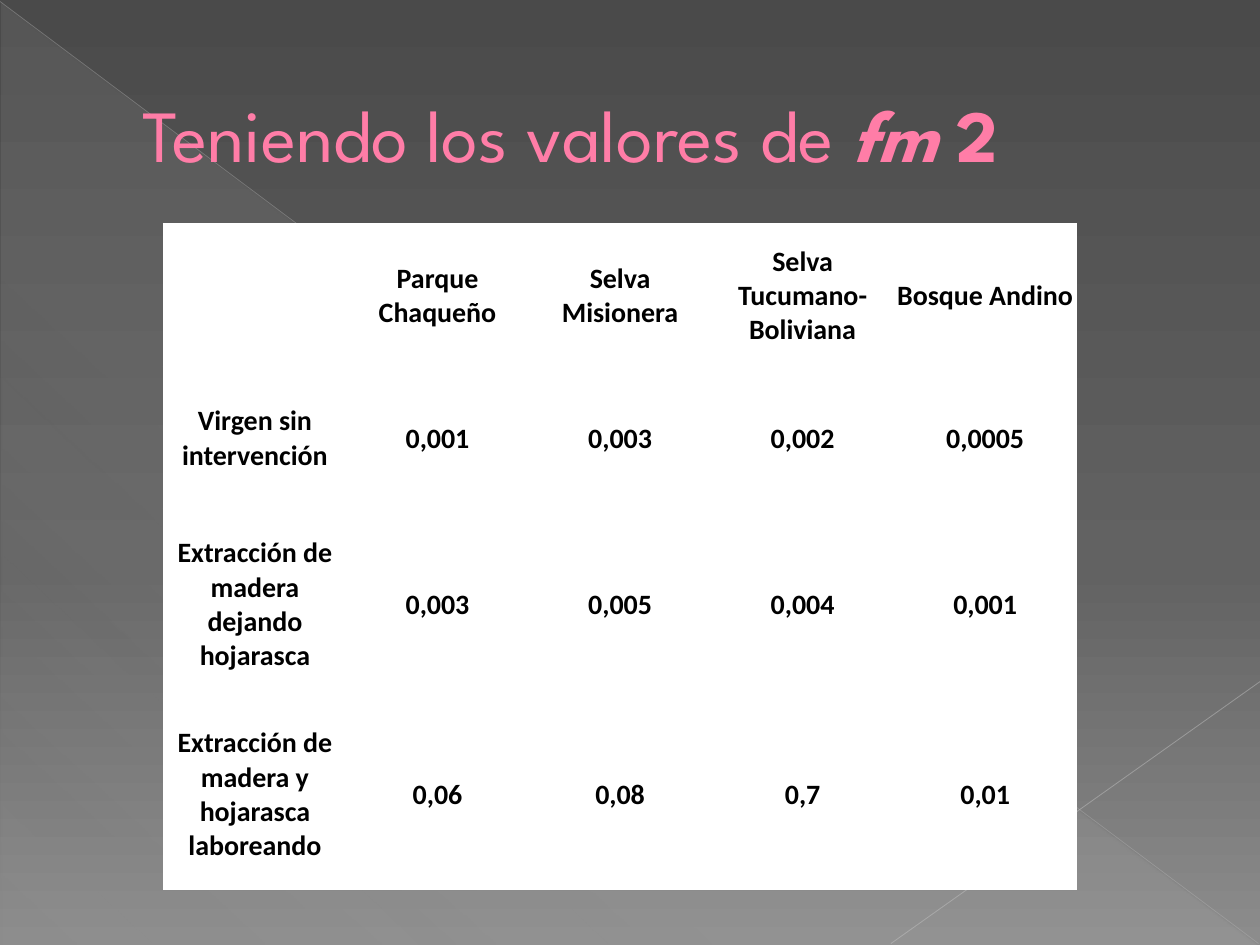
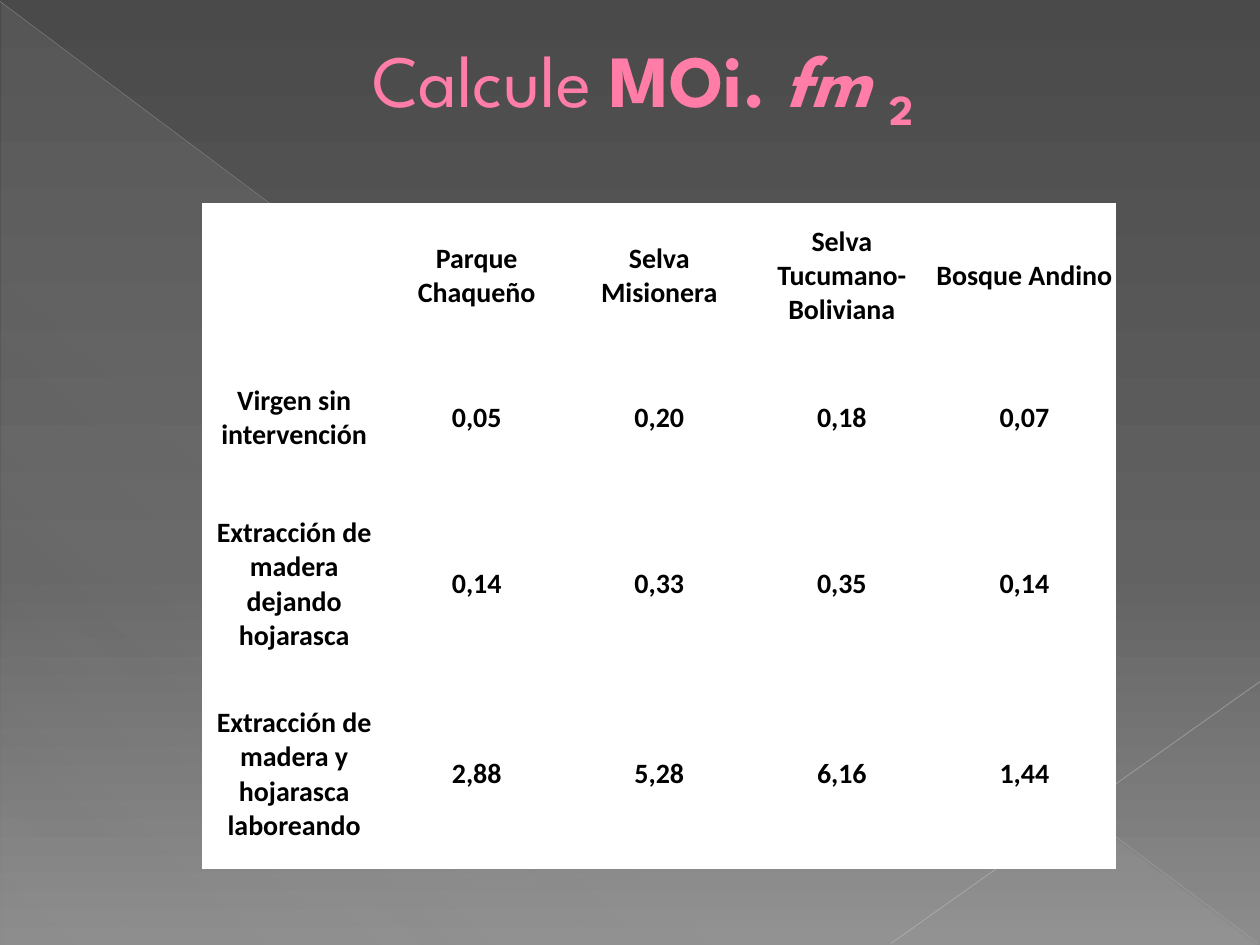
from lxml import etree
from pptx import Presentation
from pptx.dml.color import RGBColor
from pptx.enum import shapes, text
from pptx.oxml import ns
from pptx.util import Cm, Pt

PINK, PLUM, WHITE, BLACK = "FF7DA7", "B12761", "FFFFFF", "000000"
BACKDROP = [(0, "4A4A4A", 100), (60, "626262", 100), (100, "8C8C8C", 100)]
SHEEN = [(0, "D2D2D2", 10), (70, "D2D2D2", 8), (100, "D2D2D2", 1)]
RAYS = [
    ((0, 0.03, 25.37, 19.02), "BFBFBF", 0.39, 35),
    ((25.4, 13.74, 17.96, 19.02), "C6C6C6", 0.47, 45),
]
TITLE_FONT, TABLE_FONT = "League Spartan", "Calibri"
TITLE_BOX = (1.27, 0.74, 22.86, 3.89)

FORESTS = ["Parque Chaqueño", "Selva Misionera", "Selva Tucumano-Boliviana", "Bosque Andino"]
USES = [
    "Virgen sin intervención",
    "Extracción de madera dejando hojarasca",
    "Extracción de madera y hojarasca laboreando",
]
COLUMN_WIDTH = 3.68
ROW_HEIGHTS = [2.87, 2.87, 3.83, 3.83]

PAGES = [
    {
        "title": [
            ("Teniendo los valores de ", {}),
            ("fm ", {"bold": True, "italic": True}),
            ("2", {"bold": True}),
        ],
        "layout": {"align": text.PP_ALIGN.LEFT, "indent": 1.35, "bottom": 0.13},
        "corner": (3.3, 4.52),
        "values": [
            ["0,001", "0,003", "0,002", "0,0005"],
            ["0,003", "0,005", "0,004", "0,001"],
            ["0,06", "0,08", "0,7", "0,01"],
        ],
    },
    {
        "title": [
            ("Calcule ", {}),
            ("MOi. ", {"bold": True}),
            ("fm ", {"bold": True, "italic": True}),
            ("2", {"bold": True, "baseline": -25}),
        ],
        "layout": {"align": text.PP_ALIGN.CENTER, "indent": 0.53, "bottom": 2.1},
        "corner": (4.09, 4.11),
        "values": [
            ["0,05", "0,20", "0,18", "0,07"],
            ["0,14", "0,33", "0,35", "0,14"],
            ["2,88", "5,28", "6,16", "1,44"],
        ],
    },
]


def color(value):
    return RGBColor.from_string(value)


def add(parent, tag, **attributes):
    child = etree.SubElement(parent, ns.qn(tag))
    for name, value in attributes.items():
        child.set(name, str(value))
    return child


def add_color(parent, value, opacity=100):
    tone = add(parent, "a:srgbClr", val=value)
    if opacity < 100:
        add(tone, "a:alpha", val=opacity * 1000)


def set_gradient(fill, root, stops, angle):
    fill.gradient()
    gradient = root.find(".//" + ns.qn("a:gradFill"))
    for child in list(gradient):
        gradient.remove(child)
    stop_list = add(gradient, "a:gsLst")
    for position, value, opacity in stops:
        add_color(add(stop_list, "a:gs", pos=position * 1000), value, opacity)
    add(gradient, "a:lin", ang=angle * 60000, scaled=0)


def add_span(para, words, font, size, tint, bold=False, italic=False, baseline=0, outline=None):
    span = para.add_run()
    span.text = words
    span.font.name, span.font.size = font, Pt(size)
    span.font.bold, span.font.italic = bold, italic
    span.font.color.rgb = color(tint)
    properties = span.font._element
    if baseline:
        properties.set("baseline", str(baseline * 1000))
    if outline:
        line = add(properties, "a:ln", w=Pt(0.5))
        add_color(add(line, "a:solidFill"), outline)
        properties.insert(0, line)


def decorate_master(master, page):
    """Give the master its gradient, corner triangle and thin diagonal lines."""
    set_gradient(master.background.fill, master.element, BACKDROP, 90)
    triangle = page.shapes.add_shape(
        shapes.MSO_SHAPE.RIGHT_TRIANGLE, Cm(0.03), Cm(0.05), Cm(25.34), Cm(19))
    triangle.shadow.inherit = False
    triangle.line.fill.background()
    set_gradient(triangle.fill, triangle.element, SHEEN, 133)
    decor = [triangle]
    for ends, tint, width, opacity in RAYS:
        ray = page.shapes.add_connector(shapes.MSO_CONNECTOR.STRAIGHT, *map(Cm, ends))
        ray.line.width = Pt(width)
        ray.line.color.rgb = color(tint)
        tone = ray.element.spPr.find(".//" + ns.qn("a:srgbClr"))
        add(tone, "a:alpha", val=opacity * 1000)
        add(ray.element.spPr, "a:effectLst")
        decor.append(ray)
    for order, shape in enumerate(decor):
        shape.element.xpath(".//p:cNvPr")[0].set("id", str(20 + order))
        master.shapes._spTree.insert(2 + order, shape.element)


def fill_title(box, spans, align, indent, bottom):
    box.left, box.top, box.width, box.height = map(Cm, TITLE_BOX)
    frame = box.text_frame
    frame.auto_size = text.MSO_AUTO_SIZE.NONE
    frame.vertical_anchor = text.MSO_ANCHOR.MIDDLE
    frame.margin_bottom = Cm(bottom)
    para = frame.paragraphs[0]
    para.alignment = align
    settings = para._p.get_or_add_pPr()
    settings.set("marL", str(Cm(indent)))
    settings.set("indent", "0")
    for words, style in spans:
        add_span(para, words, TITLE_FONT, 42, PINK, outline=PLUM, **style)


def fill_cell(cell, words):
    cell.margin_left = cell.margin_right = cell.margin_top = Cm(0.03)
    cell.margin_bottom = 0
    cell.vertical_anchor = text.MSO_ANCHOR.MIDDLE
    for side in "LRTB":
        border = add(cell._tc.get_or_add_tcPr(), "a:ln" + side, w=Pt(1))
        add_color(add(border, "a:solidFill"), WHITE)
    cell.fill.solid()
    cell.fill.fore_color.rgb = color(WHITE)
    if words:
        para = cell.text_frame.paragraphs[0]
        para.alignment = text.PP_ALIGN.CENTER
        add_span(para, words, TABLE_FONT, 16, BLACK, bold=True)


def add_factor_table(page, corner, values):
    rows = [["", *FORESTS]] + [[use, *line] for use, line in zip(USES, values)]
    columns = len(rows[0])
    table = page.shapes.add_table(
        len(rows), columns, *map(Cm, corner),
        Cm(COLUMN_WIDTH * columns), Cm(sum(ROW_HEIGHTS))).table
    for column in table.columns:
        column.width = Cm(COLUMN_WIDTH)
    for row, height, line in zip(table.rows, ROW_HEIGHTS, rows):
        row.height = Cm(height)
        for cell, words in zip(row.cells, line):
            fill_cell(cell, words)


def main():
    deck = Presentation()
    deck.slide_width, deck.slide_height = Cm(25.4), Cm(19.05)
    for number, content in enumerate(PAGES):
        page = deck.slides.add_slide(deck.slide_layouts.get_by_name("Title Only"))
        if number == 0:
            decorate_master(deck.slide_master, page)
        fill_title(page.shapes.title, content["title"], **content["layout"])
        add_factor_table(page, content["corner"], content["values"])
    deck.save("out.pptx")


if __name__ == "__main__":
    main()
